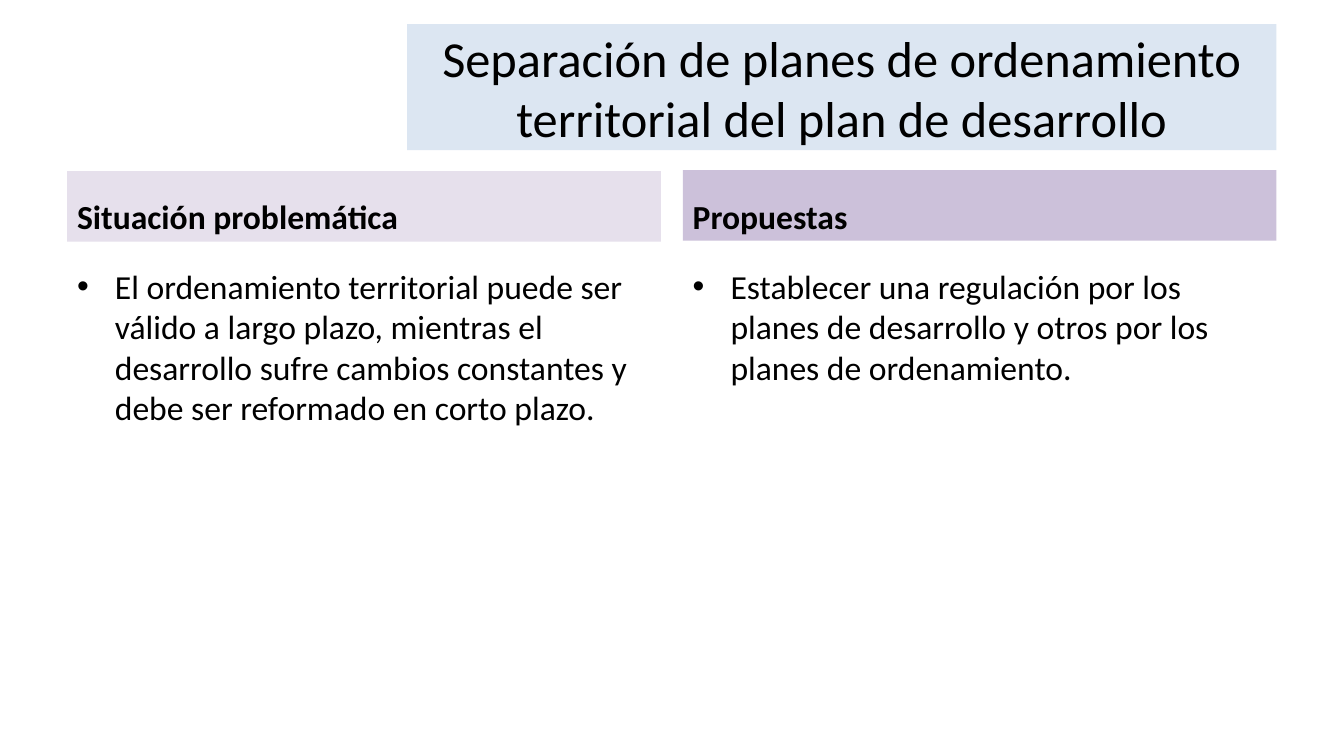
from dataclasses import dataclass

from lxml.etree import SubElement
from pptx import Presentation
from pptx.dml.color import RGBColor
from pptx.enum.text import MSO_ANCHOR, MSO_AUTO_SIZE, PP_ALIGN
from pptx.oxml.ns import qn
from pptx.slide import Slide
from pptx.text.text import TextFrame
from pptx.util import Pt

BLACK = RGBColor(0x00, 0x00, 0x00)
PALE_BLUE = RGBColor(0xDC, 0xE6, 0xF2)
PALE_LILAC = RGBColor(0xE6, 0xE0, 0xEC)
LILAC = RGBColor(0xCC, 0xC1, 0xDA)

TITLE = "Separación de planes de ordenamiento territorial del plan de desarrollo"
COLUMN_WIDTH = 424.1
HEADING_HEIGHT = 50.4
BODY_TOP = 186.5
BODY_HEIGHT = 295.9
BULLET_INDENT = 27


@dataclass(frozen=True)
class Column:
    left: float
    heading_top: float
    heading: str
    fill: RGBColor
    body: str


COLUMNS = [
    Column(48, 122.2, "Situación problemática", PALE_LILAC,
           "El ordenamiento territorial puede ser válido a largo plazo, mientras el "
           "desarrollo sufre cambios constantes y debe ser reformado en corto plazo."),
    Column(487.7, 121.6, "Propuestas", LILAC,
           "Establecer una regulación por los planes de desarrollo y otros por los "
           "planes de ordenamiento."),
]


def write(tf: TextFrame, text: str, size: float, anchor: MSO_ANCHOR,
          align: PP_ALIGN = PP_ALIGN.LEFT, bold: bool = False,
          bullet: bool = False) -> None:
    tf.text = text
    tf.word_wrap = True
    tf.auto_size = MSO_AUTO_SIZE.NONE
    tf.vertical_anchor = anchor
    p = tf.paragraphs[0]
    p.alignment = align
    if bullet:
        pPr = p._p.get_or_add_pPr()
        pPr.set("marL", str(Pt(BULLET_INDENT)))
        pPr.set("indent", str(-Pt(BULLET_INDENT)))
        SubElement(pPr, qn("a:buFont")).set("typeface", "Arial")
        SubElement(pPr, qn("a:buChar")).set("char", "•")
    font = p.runs[0].font
    font.name = "Calibri"
    font.size = Pt(size)
    font.bold = bold
    font.color.rgb = BLACK


def add_title(slide: Slide) -> None:
    sp = slide.shapes.title
    sp.left, sp.top, sp.width, sp.height = Pt(290.9), Pt(17.3), Pt(620.9), Pt(90)
    sp.fill.solid()
    sp.fill.fore_color.rgb = PALE_BLUE
    write(sp.text_frame, TITLE, 36, MSO_ANCHOR.MIDDLE, PP_ALIGN.CENTER)


def add_column(slide: Slide, column: Column) -> None:
    left, width = Pt(column.left), Pt(COLUMN_WIDTH)
    body = slide.shapes.add_textbox(left, Pt(BODY_TOP), width, Pt(BODY_HEIGHT))
    write(body.text_frame, column.body, 24, MSO_ANCHOR.TOP, bullet=True)
    heading = slide.shapes.add_textbox(left, Pt(column.heading_top), width, Pt(HEADING_HEIGHT))
    heading.fill.solid()
    heading.fill.fore_color.rgb = column.fill
    write(heading.text_frame, column.heading, 24, MSO_ANCHOR.BOTTOM, bold=True)


def main() -> None:
    prs = Presentation()
    prs.slide_width, prs.slide_height = Pt(960), Pt(540)
    slide = prs.slides.add_slide(prs.slide_layouts[5])
    add_title(slide)
    for column in COLUMNS:
        add_column(slide, column)
    prs.save("out.pptx")


if __name__ == "__main__":
    main()
